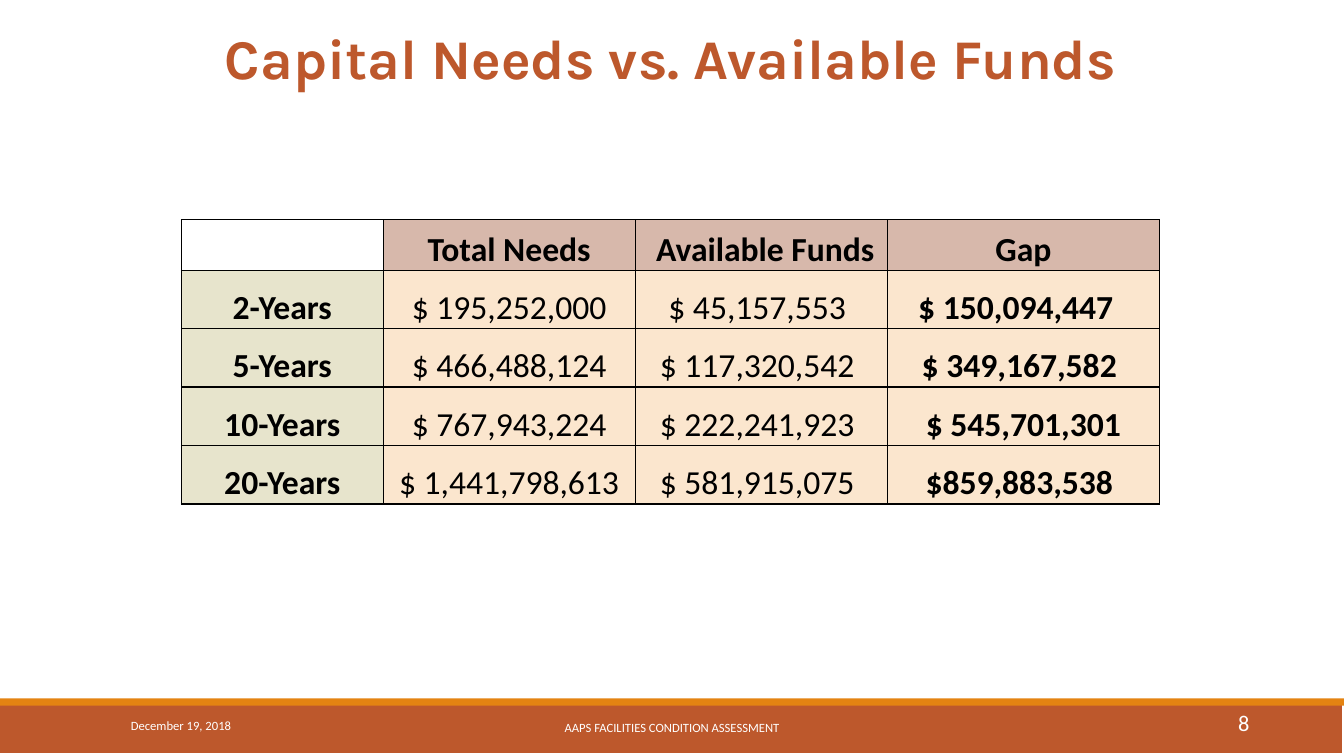
"""Build the capital needs versus available funds slide."""
from lxml import etree
from pptx import Presentation
from pptx import util as u
from pptx.dml.color import RGBColor
from pptx.enum import shapes, text
from pptx.oxml.ns import qn

PX = 9144
COLORS = {"rust": "BD582C", "orange": "E48312", "white": "FFFFFF", "black": "000000",
          "head": "D7B8AB", "label": "E7E4CC", "value": "FBE6CE"}
TITLE = "Capital Needs vs. Available Funds"
BANDS = [((-2, 697, 1333, 50), "rust"), ((0, 693, 1333, 7), "orange")]
FOOTER = [
    ("December 19, 2018", (120, 700, 270, 40), 9, "LEFT"),
    ("AAPS FACILITIES CONDITION ASSESSMENT", (403, 702, 527, 40), 9, "CENTER"),
    ("8", (1106, 697, 143, 40), 16, "RIGHT"),
]
ROWS = [
    ("", "Total Needs", "Available Funds", "Gap"),
    ("2-Years", "$ 195,252,000", "$ 45,157,553", "$ 150,094,447"),
    ("5-Years", "$ 466,488,124", "$ 117,320,542", "$ 349,167,582"),
    ("10-Years", "$ 767,943,224", "$ 222,241,923", "$ 545,701,301"),
    ("20-Years", "$ 1,441,798,613", "$ 581,915,075", "$859,883,538"),
]
LEFT_INSETS = {(0, 2): 8}
RIGHT_INSETS = {(1, 2): 8, (2, 2): 8, (3, 2): 8, (4, 2): 8,
                (1, 3): 15, (2, 3): 8, (4, 3): 8}
COL_WIDTHS = (200, 250, 250, 270)
ROW_HEIGHTS = (50, 58, 58, 58, 58)
TABLE_AT = (180, 218)


def rgb(name):
    return RGBColor.from_string(COLORS[name])


def box(*lengths):
    return [u.Emu(n * PX) for n in lengths]


def write(tf, words, size=24, font="Calibri", color="black", bold=False, align="CENTER"):
    p = tf.paragraphs[0]
    p.alignment = text.PP_ALIGN[align]
    r = p.add_run()
    r.text = words
    r.font.name, r.font.size, r.font.bold = font, u.Pt(size), bold
    r.font.color.rgb = rgb(color)
    return p


def add_borders(cell):
    tcPr = cell._tc.get_or_add_tcPr()
    for i, side in enumerate(("lnL", "lnR", "lnT", "lnB")):
        ln = etree.Element(qn(f"a:{side}"), w=str(u.Pt(1)))
        fill = etree.SubElement(ln, qn("a:solidFill"))
        etree.SubElement(fill, qn("a:srgbClr"), val=COLORS["black"])
        tcPr.insert(i, ln)


def cell_fill(row, col):
    if row == 0:
        return "head" if col else "white"
    return "value" if col else "label"


def add_table(s):
    size = (sum(COL_WIDTHS), sum(ROW_HEIGHTS))
    table = s.shapes.add_table(len(ROWS), len(COL_WIDTHS), *box(*TABLE_AT, *size)).table
    for col, width in zip(table.columns, COL_WIDTHS):
        col.width = u.Emu(width * PX)
    for row, height in zip(table.rows, ROW_HEIGHTS):
        row.height = u.Emu(height * PX)
    for i, row in enumerate(ROWS):
        for j, words in enumerate(row):
            cell = table.cell(i, j)
            cell.fill.solid()
            cell.fill.fore_color.rgb = rgb(cell_fill(i, j))
            cell.margin_top = cell.margin_bottom = 0
            cell.margin_left = u.Emu(LEFT_INSETS.get((i, j), 0) * PX)
            cell.margin_right = u.Emu(RIGHT_INSETS.get((i, j), 0) * PX)
            cell.vertical_anchor = text.MSO_ANCHOR.BOTTOM
            add_borders(cell)
            if words:
                write(cell.text_frame, words, bold=i == 0 or j in (0, 3))


def main():
    prs = Presentation()
    prs.slide_width, prs.slide_height = box(1333, 750)
    s = prs.slides.add_slide(prs.slide_layouts[5])
    for at, color in BANDS:
        sp = s.shapes.add_shape(shapes.MSO_SHAPE.RECTANGLE, *box(*at))
        sp.shadow.inherit = False
        sp.fill.solid()
        sp.fill.fore_color.rgb = rgb(color)
        sp.line.fill.background()

    title = s.shapes.title
    title.left, title.top, title.width, title.height = box(15, 22, 1300, 80)
    title.text_frame.vertical_anchor = text.MSO_ANCHOR.MIDDLE
    p = write(title.text_frame, TITLE, size=40, font="Karla", color="rust", bold=True)
    p.line_spacing = 0.85

    for words, at, size, align in FOOTER:
        tf = s.shapes.add_textbox(*box(*at)).text_frame
        tf.word_wrap = True
        tf.vertical_anchor = text.MSO_ANCHOR.MIDDLE
        write(tf, words, size=size, color="white", align=align)

    add_table(s)
    prs.save("out.pptx")


if __name__ == "__main__":
    main()
